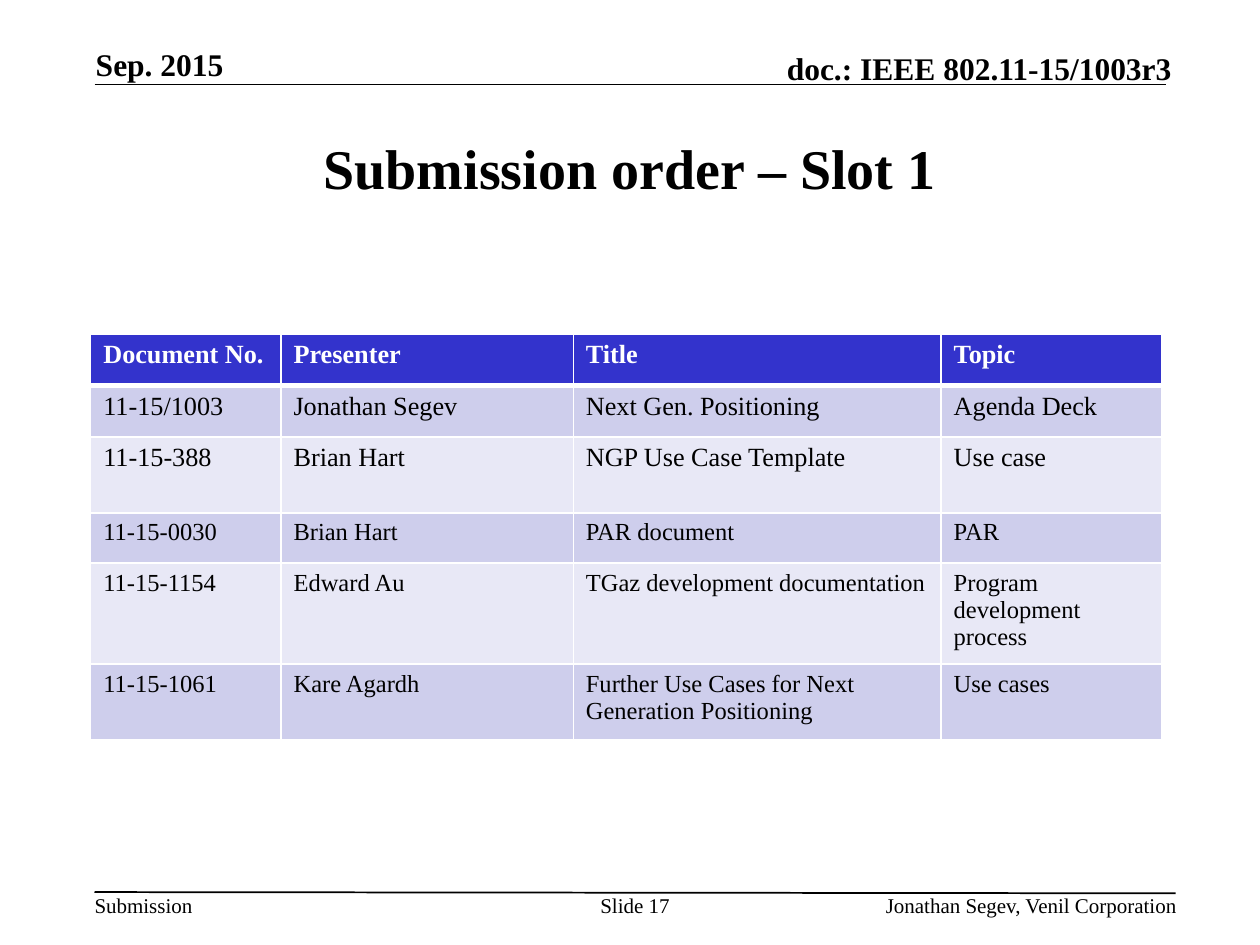
from lxml.etree import SubElement
from pptx import Presentation
from pptx.dml.color import RGBColor
from pptx.enum.shapes import MSO_CONNECTOR
from pptx.enum.text import MSO_ANCHOR, PP_ALIGN
from pptx.oxml import parse_xml
from pptx.oxml.ns import nsdecls, qn
from pptx.util import Inches, Pt

FONT = "Times New Roman"
COLORS = {
    "ink": "000000",
    "paper": "FFFFFF",
    "header": "3333CC",
    "odd": "CECEEC",
    "even": "E8E8F6",
}
COL_WIDTHS = [1.51, 2.32, 2.92, 1.75]
ROW_HEIGHTS = [0.41, 0.41, 0.6, 0.4, 0.75, 0.6]
ROW_SIZES = [15, 15, 15, 14, 14, 14]
SUBMISSIONS = [
    ["Document No.", "Presenter", "Title", "Topic"],
    ["11-15/1003", "Jonathan Segev", "Next Gen. Positioning", "Agenda Deck"],
    ["11-15-388", "Brian Hart", "NGP Use Case Template", "Use case"],
    ["11-15-0030", "Brian Hart", "PAR document", "PAR"],
    ["11-15-1154", "Edward Au", "TGaz development documentation",
     "Program development process"],
    ["11-15-1061", "Kare Agardh",
     "Further Use Cases for Next Generation Positioning", "Use cases"],
]


def rgb(name):
    return RGBColor.from_string(COLORS[name])


def write(tf, text, size=12, bold=False, color="ink", align=PP_ALIGN.LEFT):
    p = tf.paragraphs[0]
    p.alignment = align
    r = p.add_run()
    r.text = text
    r.font.name = FONT
    r.font.size = Pt(size)
    r.font.bold = bold
    r.font.color.rgb = rgb(color)


def add_text(s, box, text, anchor=MSO_ANCHOR.TOP, wrap=True, **fmt):
    tf = s.shapes.add_textbox(*map(Inches, box)).text_frame
    tf.margin_left = tf.margin_right = tf.margin_top = tf.margin_bottom = 0
    tf.word_wrap = wrap
    tf.vertical_anchor = anchor
    write(tf, text, **fmt)


def add_rule(s, x1, y1, x2, y2):
    line = s.shapes.add_connector(
        MSO_CONNECTOR.STRAIGHT, *map(Inches, (x1, y1, x2, y2)))
    line.line.color.rgb = rgb("ink")
    line.line.width = Pt(1)
    SubElement(line._element.spPr, qn("a:effectLst"))


def set_borders(cell, **widths):
    """Draw white borders; widths are points keyed by L, R, T and B."""
    tcPr = cell._tc.get_or_add_tcPr()
    for i, (side, width) in enumerate(widths.items()):
        tcPr.insert(i, parse_xml(
            f'<a:ln{side} {nsdecls("a")} w="{Pt(width)}"><a:solidFill>'
            f'<a:srgbClr val="{COLORS["paper"]}"/></a:solidFill></a:ln{side}>'))


def add_header(s, x, y, w):
    add_rule(s, x, y + 0.31, x + w, y + 0.31)
    fmt = dict(anchor=MSO_ANCHOR.BOTTOM, size=18, bold=True)
    add_text(s, (x + w - 3.78, y + 0.03, 3.83, 0.3),
             "doc.: IEEE 802.11-15/1003r3", align=PP_ALIGN.RIGHT, **fmt)
    add_text(s, (x + 0.01, y, 2.05, 0.3), "Sep. 2015", **fmt)


def add_footer(s, x, y, w):
    add_rule(s, x, y, x + w, y + 0.01)
    add_text(s, (x, y, 0.78, 0.2), "Submission", wrap=False)
    add_text(s, (x + 4, y, 0.58, 0.4), "Slide 17", align=PP_ALIGN.CENTER)
    add_text(s, (x + w - 3.47, y, 3.48, 0.2),
             "Jonathan Segev, Venil Corporation", align=PP_ALIGN.RIGHT)


def add_submission_table(s, x, y):
    box = (x, y, sum(COL_WIDTHS), sum(ROW_HEIGHTS))
    table = s.shapes.add_table(len(SUBMISSIONS), len(COL_WIDTHS),
                               *map(Inches, box)).table
    for col, width in zip(table.columns, COL_WIDTHS):
        col.width = Inches(width)
    for i, (row, height) in enumerate(zip(table.rows, ROW_HEIGHTS)):
        row.height = Inches(height)
        head = i == 0
        fill = "header" if head else "odd" if i % 2 else "even"
        for cell, text in zip(row.cells, SUBMISSIONS[i]):
            cell.fill.solid()
            cell.fill.fore_color.rgb = rgb(fill)
            set_borders(cell, L=1, R=1, T=3 if i == 1 else 1, B=3 if head else 1)
            write(cell.text_frame, text, size=ROW_SIZES[i], bold=head,
                  color="paper" if head else "ink")


def main():
    prs = Presentation()
    prs.slide_width, prs.slide_height = Inches(10), Inches(7.5)
    s = prs.slides.add_slide(prs.slide_layouts[6])
    add_header(s, 0.75, 0.36, 8.5)
    add_text(s, (0.75, 0.75, 8.5, 1.16), "Submission order – Slot 1",
             anchor=MSO_ANCHOR.MIDDLE, size=32, bold=True,
             align=PP_ALIGN.CENTER)
    add_submission_table(s, 0.72, 2.65)
    add_footer(s, 0.75, 7.08, 8.58)
    prs.save("out.pptx")


if __name__ == "__main__":
    main()
